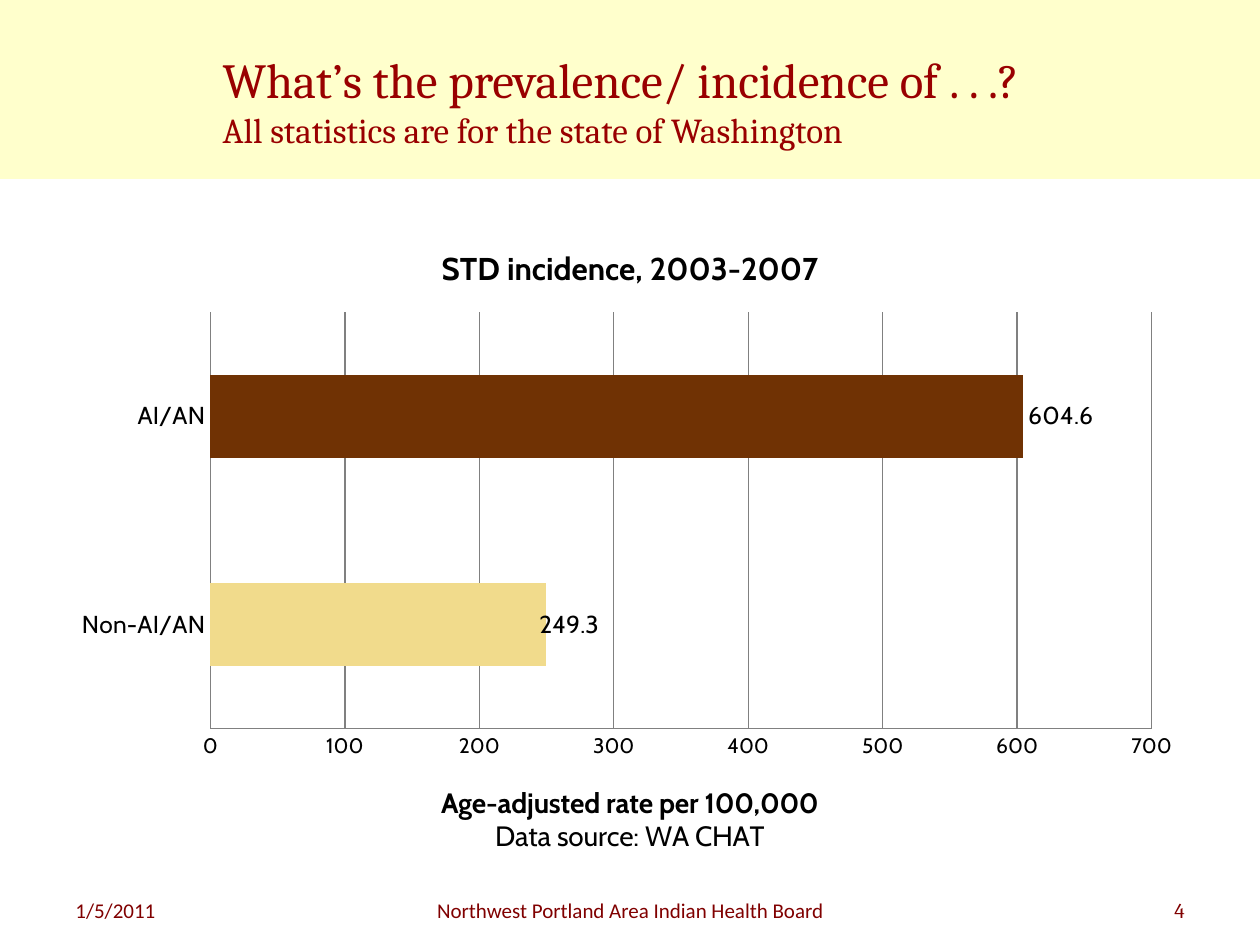
from lxml.etree import SubElement
from pptx import Presentation
from pptx.chart.data import CategoryChartData
from pptx.dml.color import RGBColor
from pptx.enum.chart import XL_CHART_TYPE, XL_LABEL_POSITION, XL_TICK_MARK
from pptx.enum.shapes import MSO_SHAPE
from pptx.enum.text import MSO_ANCHOR, PP_ALIGN
from pptx.oxml.ns import qn
from pptx.util import Pt

HEADING = "What’s the prevalence/ incidence of . . .?"
SUBHEADING = "All statistics are for the state of Washington"
CHART_TITLE = "STD incidence, 2003-2007"
RATE_TITLE = "Age-adjusted rate per 100,000"
DATA_SOURCE = "Data source: WA CHAT"
RATES = [("Non-AI/AN", 249.3, "F1DB8C"), ("AI/AN", 604.6, "703204")]
FOOTERS = [
    ("1/5/2011", 63, 294, PP_ALIGN.LEFT, "Calibri"),
    ("Northwest Portland Area Indian Health Board", 368, 525, PP_ALIGN.CENTER, "Calibri"),
    ("4", 903, 294, PP_ALIGN.RIGHT, "Cambria"),
]
THEME = {
    "band": "FFFFCC", "title": "990000", "footer": "800000",
    "ink": "000000", "grid": "808080",
    "heading": 28, "subheading": 20, "chart_title": 18, "rate": 16,
    "label": 14, "tick": 12, "small": 12,
    "title_font": "Cambria", "chart_font": "Cabin",
}
SLIDE_W, SLIDE_H, BAND_H = 1260, 945, 179


def px(count):
    return round(count * 914400 / 126)


def box(left, top, width, height):
    return [px(side) for side in (left, top, width, height)]


def style(font, size, color, face, bold=False):
    font.size, font.bold, font.name = Pt(size), bold, face
    font.color.rgb = RGBColor.from_string(color)


def write(paragraph, text, *, size, color, face, bold=False, align=None):
    run = paragraph.add_run()
    run.text = text
    style(run.font, size, color, face, bold)
    if align is not None:
        paragraph.alignment = align


def place_manually(layout, **fractions):
    manual = SubElement(layout, qn("c:manualLayout"))
    for tag, value in fractions.items():
        SubElement(manual, qn(f"c:{tag}")).set("val", str(value))


def add_layout(parent, previous, **fractions):
    for old in parent.findall(qn("c:layout")):
        parent.remove(old)
    layout = SubElement(parent, qn("c:layout"))
    if previous is None:
        parent.insert(0, layout)
    else:
        previous.addnext(layout)
    place_manually(layout, **fractions)


def add_heading(slide):
    band = slide.shapes.add_shape(MSO_SHAPE.RECTANGLE, *box(0, 0, SLIDE_W, BAND_H))
    band.shadow.inherit = False
    band.fill.solid()
    band.fill.fore_color.rgb = RGBColor.from_string(THEME["band"])
    band.line.fill.background()
    title = slide.shapes.title
    title._element.addprevious(band._element)
    title.left, title.top, title.width, title.height = box(210, 21, 1008, 158)
    title.text_frame.vertical_anchor = MSO_ANCHOR.MIDDLE
    line = title.text_frame.paragraphs[0]
    look = {"color": THEME["title"], "face": THEME["title_font"], "align": PP_ALIGN.LEFT}
    write(line, HEADING, size=THEME["heading"], **look)
    line.add_line_break()
    write(line, SUBHEADING, size=THEME["subheading"], **look)


def add_rates_chart(slide):
    rates = CategoryChartData()
    rates.categories = [group for group, _, _ in RATES]
    rates.add_series("Series 1", [rate for _, rate, _ in RATES])
    chart = slide.shapes.add_chart(
        XL_CHART_TYPE.BAR_CLUSTERED, *box(63, 221, 1134, 651), rates).chart
    ink, face = THEME["ink"], THEME["chart_font"]
    style(chart.font, 10, ink, face)
    chart.has_legend = False

    chart.has_title = True
    write(chart.chart_title.text_frame.paragraphs[0], CHART_TITLE,
          size=THEME["chart_title"], color=ink, face=face, bold=True)

    groups, scale = chart.category_axis, chart.value_axis
    for axis, size in ((groups, THEME["label"]), (scale, THEME["tick"])):
        axis.major_tick_mark = axis.minor_tick_mark = XL_TICK_MARK.NONE
        style(axis.tick_labels.font, size, ink, face)
        axis.format.line.color.rgb = RGBColor.from_string(THEME["grid"])
    groups.has_major_gridlines = False
    scale.minimum_scale, scale.maximum_scale, scale.major_unit = 0, 700, 100
    scale.has_major_gridlines = True
    scale.major_gridlines.format.line.color.rgb = RGBColor.from_string(THEME["grid"])

    caption = scale.axis_title.text_frame
    write(caption.paragraphs[0], RATE_TITLE, size=THEME["rate"], color=ink, face=face, bold=True)
    write(caption.add_paragraph(), DATA_SOURCE, size=THEME["rate"], color=ink, face=face)
    caption_root = scale.axis_title._element
    add_layout(caption_root, caption_root.find(qn("c:tx")),
               xMode="edge", yMode="edge", x=0.33, y=0.86)

    plot = chart.plots[0]
    plot.gap_width = 150
    plot.vary_by_categories = False
    series = plot.series[0]
    for index, (_, _, color) in enumerate(RATES):
        fill = series.points[index].format.fill
        fill.solid()
        fill.fore_color.rgb = RGBColor.from_string(color)
    nudged = series.points[0].data_label
    nudged.position = XL_LABEL_POSITION.OUTSIDE_END
    style(nudged.font, THEME["label"], ink, face)
    labels = series.data_labels
    labels.show_value = True
    labels.position = XL_LABEL_POSITION.OUTSIDE_END
    style(labels.font, THEME["label"], ink, face)
    nudged_root = labels._element.find(qn("c:dLbl"))
    add_layout(nudged_root, nudged_root.find(qn("c:idx")), x=-0.01, y=0)

    plot_area = chart._chartSpace.chart.plotArea
    add_layout(plot_area, None, layoutTarget="inner", xMode="edge", yMode="edge",
               x=0.13, y=0.14, w=0.83, h=0.64)


def add_footers(slide):
    for text, left, width, align, face in FOOTERS:
        frame = slide.shapes.add_textbox(*box(left, 891, width, 54)).text_frame
        frame.word_wrap = True
        write(frame.paragraphs[0], text, size=THEME["small"], color=THEME["footer"],
              face=face, align=align)


def main():
    deck = Presentation()
    deck.slide_width, deck.slide_height = px(SLIDE_W), px(SLIDE_H)
    slide = deck.slides.add_slide(deck.slide_layouts[5])
    add_heading(slide)
    add_footers(slide)
    add_rates_chart(slide)
    deck.save("out.pptx")


if __name__ == "__main__":
    main()
